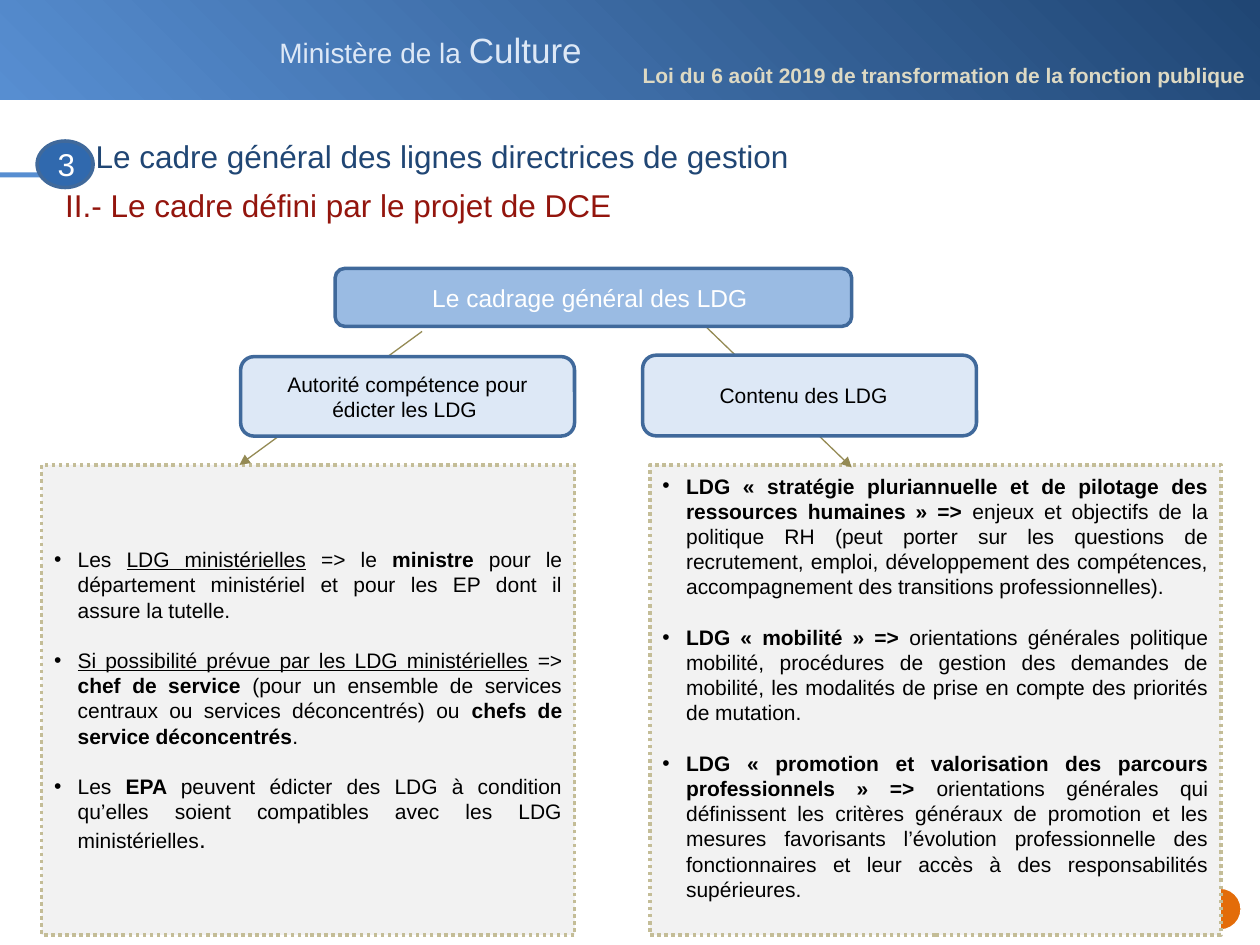
"""Build the slide on the general framework of the LDG management guidelines."""
import pptx
import pptx.dml.color
import pptx.enum.dml
import pptx.enum.shapes
import pptx.enum.text
import pptx.oxml.ns
import pptx.util
from lxml import etree

Pt = pptx.util.Pt
RGBColor = pptx.dml.color.RGBColor
Shape = pptx.enum.shapes.MSO_SHAPE
Align = pptx.enum.text.PP_ALIGN
Anchor = pptx.enum.text.MSO_ANCHOR
qn = pptx.oxml.ns.qn

NAVY = RGBColor(0x20, 0x46, 0x74)
SKY = RGBColor(0x57, 0x8E, 0xD1)
PALE_BLUE = RGBColor(0xDD, 0xE8, 0xF6)
MID_BLUE = RGBColor(0x9A, 0xBB, 0xE3)
BADGE_BLUE = RGBColor(0x30, 0x69, 0xAE)
OUTLINE_BLUE = RGBColor(0x40, 0x69, 0x9B)
ORANGE = RGBColor(0xE3, 0x6C, 0x09)
DARK_RED = RGBColor(0x93, 0x15, 0x0D)
CREAM = RGBColor(0xDD, 0xD9, 0xC3)
SAND = RGBColor(0xC4, 0xBD, 0x97)
OLIVE = RGBColor(0x94, 0x8A, 0x54)
LIGHT_GREY = RGBColor(0xF2, 0xF2, 0xF2)
WHITE = RGBColor(0xFF, 0xFF, 0xFF)
BLACK = RGBColor(0, 0, 0)


def add_block(page, kind, place, fill, outline=None, weight=2):
    block = page.shapes.add_shape(kind, *[Pt(length) for length in place])
    block.shadow.inherit = False
    block.fill.solid()
    block.fill.fore_color.rgb = fill
    if outline is None:
        block.line.fill.background()
    else:
        block.line.color.rgb = outline
        block.line.width = Pt(weight)
    block.text_frame.word_wrap = True
    block.text_frame.vertical_anchor = Anchor.MIDDLE
    return block


def write_spans(para, spans, color, align=Align.LEFT):
    para.alignment = align
    for text, size, style in spans:
        span = para.add_run()
        span.text = text
        span.font.name = "Arial"
        span.font.size = Pt(size)
        span.font.color.rgb = color
        span.font.bold = style == "bold"
        span.font.underline = style == "underline"


deck = pptx.Presentation()
deck.slide_width = Pt(720)
deck.slide_height = Pt(540)
page = deck.slides.add_slide(deck.slide_layouts[6])

banner = add_block(page, Shape.RECTANGLE, (0, 0, 720, 57), NAVY)
banner.fill.gradient()
banner.fill.gradient_angle = 225
for stop, color, position in zip(banner.fill.gradient_stops, (NAVY, SKY), (0, 1)):
    stop.color.rgb = color
    stop.position = position

add_block(page, Shape.RECTANGLE, (0, 98.6, 49, 2.9), SKY)
add_block(page, Shape.OVAL, (685.4, 507.6, 23.8, 23.8), ORANGE, WHITE, 0.75)

headings = [
    ((152.6, 13, 189.4, 31.7), [("Ministère de la ", 16, ""), ("Culture", 20, "")], PALE_BLUE),
    ((367.2, 38.2, 349.2, 12.2),
     [("Loi du 6 août 2019 de transformation de la fonction publique", 12, "bold")], CREAM),
    ((30.2, 103, 566.6, 28.8), [("II.- Le cadre défini par le projet de DCE", 18, "")], DARK_RED),
    ((47.5, 74.9, 548.6, 28.8),
     [("Le cadre général des lignes directrices de gestion", 18, "")], NAVY),
]
for place, spans, color in headings:
    box = page.shapes.add_textbox(*[Pt(length) for length in place])
    box.text_frame.word_wrap = color in (DARK_RED, NAVY)
    para = box.text_frame.paragraphs[0]
    write_spans(para, spans, color)
    if color == CREAM:
        para.line_spacing = 0.85
        box.text_frame.margin_left = box.text_frame.margin_right = 0
        box.text_frame.margin_top = box.text_frame.margin_bottom = 0

content_points = [
    [("LDG « stratégie pluriannuelle et de pilotage des ressources humaines » => ", 12, "bold"),
     ("enjeux et objectifs de la politique RH (peut porter sur les questions de recrutement, "
      "emploi, développement des compétences, accompagnement des transitions "
      "professionnelles). ", 12, "")],
    [("LDG « mobilité » =>", 12, "bold"),
     (" orientations générales politique mobilité, procédures de gestion des demandes de "
      "mobilité, les modalités de prise en compte des priorités de mutation.", 12, "")],
    [("LDG « promotion et valorisation des parcours professionnels » =>", 12, "bold"),
     (" orientations générales qui définissent les critères généraux de promotion et les "
      "mesures favorisants l’évolution professionnelle des fonctionnaires et leur accès à "
      "des responsabilités supérieures. ", 12, "")],
]
authority_points = [
    [("Les ", 12, ""), ("LDG ministérielles", 12, "underline"), (" => le ", 12, ""),
     ("ministre", 12, "bold"),
     (" pour le département ministériel et pour les EP dont il assure la tutelle. ", 12, "")],
    [("Si possibilité prévue par les LDG ministérielles", 12, "underline"), (" => ", 12, ""),
     ("chef de service", 12, "bold"),
     (" (pour un ensemble de services centraux ou services déconcentrés) ou ", 12, ""),
     ("chefs de service déconcentrés", 12, "bold"), (".", 12, "")],
    [("Les ", 12, ""), ("EPA ", 12, "bold"),
     ("peuvent édicter des LDG à condition qu’elles soient compatibles avec les LDG "
      "ministérielles", 12, ""), (".", 14, "")],
]
panels = [
    ((371.5, 265.7, 326.2, 268.6), content_points, 18),
    ((23.8, 265.7, 304.6, 268.6), authority_points, 3.6),
]
for place, points, bottom in panels:
    panel = add_block(page, Shape.RECTANGLE, place, LIGHT_GREY, SAND)
    panel.line.dash_style = pptx.enum.dml.MSO_LINE.ROUND_DOT
    frame = panel.text_frame
    frame.margin_bottom = Pt(bottom)
    for index, spans in enumerate(points):
        para = frame.add_paragraph() if index else frame.paragraphs[0]
        properties = para._p.get_or_add_pPr()
        properties.set("marL", str(Pt(13.5)))
        properties.set("indent", str(-Pt(13.5)))
        etree.SubElement(properties, qn("a:buFont")).set("typeface", "Arial")
        etree.SubElement(properties, qn("a:buChar")).set("char", "•")
        if index:
            para.space_before = Pt(14.4)
        write_spans(para, spans, BLACK, Align.JUSTIFY)

arrows = [(241.2, 189.4, 136.8, 265.7), (403.9, 187.2, 486.7, 267.1)]
for ends in arrows:
    arrow = page.shapes.add_connector(
        pptx.enum.shapes.MSO_CONNECTOR.STRAIGHT, *[Pt(length) for length in ends])
    arrow.line.color.rgb = OLIVE
    arrow.line.width = Pt(0.75)
    etree.SubElement(arrow.line._get_or_add_ln(), qn("a:tailEnd")).set("type", "triangle")
    etree.SubElement(arrow._element.spPr, qn("a:effectLst"))

labels = [
    (Shape.ROUNDED_RECTANGLE, (191.5, 153.4, 295.2, 33.1), MID_BLUE,
     "Le cadrage général des LDG ", 14, WHITE),
    (Shape.ROUNDED_RECTANGLE, (137.5, 203.8, 190.8, 45.4), PALE_BLUE,
     "Autorité compétence pour édicter les LDG ", 12, BLACK),
    (Shape.ROUNDED_RECTANGLE, (367.2, 203, 190.8, 46.1), PALE_BLUE,
     "Contenu des LDG  ", 12, BLACK),
    (Shape.OVAL, (21.2, 80.6, 32, 26.6), BADGE_BLUE, "3", 18, WHITE),
]
for kind, place, fill, text, size, color in labels:
    label = add_block(page, kind, place, fill, OUTLINE_BLUE)
    write_spans(label.text_frame.paragraphs[0], [(text, size, "")], color, Align.CENTER)

deck.save("out.pptx")
